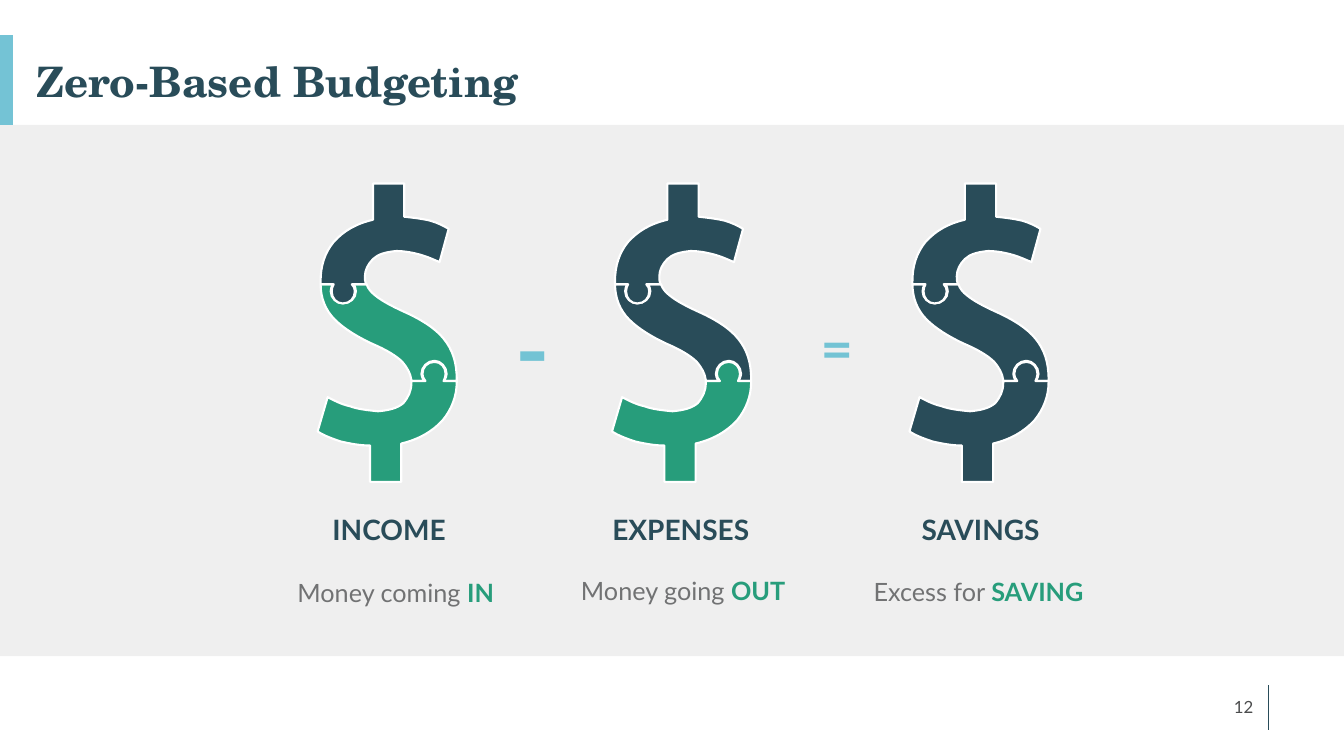
from lxml.etree import Element, SubElement
from pptx import Presentation
from pptx.dml.color import RGBColor
from pptx.enum.shapes import MSO_CONNECTOR, MSO_SHAPE
from pptx.enum.text import MSO_ANCHOR, PP_ALIGN
from pptx.oxml.ns import qn
from pptx.util import Inches, Pt

CELL = Inches(0.01)
COLUMNS, ROWS = 1333, 750
NAVY = RGBColor(0x29, 0x4C, 0x59)
GREEN = RGBColor(0x27, 0x9D, 0x7B)
SKY = RGBColor(0x74, 0xC3, 0xD5)
SIGN_BLUE = RGBColor(0x73, 0xC3, 0xD4)
GREY = RGBColor(0x71, 0x72, 0x73)
DARK_GREY = RGBColor(0x4B, 0x4C, 0x4D)
PALE = RGBColor(0xE1, 0xE1, 0xE1)
WHITE = RGBColor(0xFF, 0xFF, 0xFF)
BODY, HEADING = "Lato", "TeX Gyre Schola"

MIDDLE_PIECE = [
    (3, 100), (15, 100), (14, 102, 13, 105, 13, 107),
    (13, 114, 19, 119, 25, 119), (32, 119, 38, 114, 38, 107),
    (38, 105, 37, 102, 36, 100), (49, 100), (49, 101),
    (50, 104, 53, 108, 57, 111), (63, 116, 72, 121, 85, 127),
    (103, 135, 117, 144, 125, 154), (134, 165, 138, 178, 138, 194),
    (138, 196), (125, 196), (126, 195), (127, 193, 128, 191, 128, 189),
    (128, 182, 122, 176, 116, 176), (109, 176, 103, 182, 103, 189),
    (103, 191, 104, 193, 105, 195), (106, 196), (93, 196), (93, 195),
    (92, 188, 89, 183, 84, 177), (78, 171, 68, 165, 54, 159),
    (39, 152, 26, 144, 17, 135), (8, 126, 3, 114, 3, 100),
]
TOP_PIECE = [
    (55, 0), (86, 0), (86, 33), (95, 34, 104, 35, 112, 37),
    (119, 39, 125, 42, 130, 45), (121, 78),
    (116, 76, 110, 73, 103, 71), (96, 69, 87, 67, 78, 67),
    (68, 68, 60, 70, 55, 75), (50, 80, 47, 86, 47, 92),
    (47, 95, 47, 97, 48, 100), (34, 100),
    (36, 102, 37, 104, 37, 107), (37, 114, 32, 119, 25, 119),
    (19, 119, 14, 114, 14, 107), (14, 104, 15, 102, 16, 100),
    (3, 100), (3, 97), (3, 82, 7, 69, 16, 58), (26, 47, 38, 40, 55, 36),
]
BOTTOM_PIECE = [
    (116, 177), (122, 177, 127, 182, 127, 189),
    (127, 191, 126, 194, 125, 196), (138, 196), (138, 197),
    (138, 211, 133, 224, 124, 235), (114, 246, 100, 254, 83, 258),
    (83, 296), (52, 296), (52, 260), (42, 260, 32, 258, 23, 256),
    (14, 253, 6, 250, 0, 246), (10, 212), (16, 215, 23, 219, 32, 221),
    (40, 224, 50, 225, 60, 226), (71, 225, 79, 223, 85, 218),
    (90, 212, 93, 206, 93, 198), (93, 197, 93, 197, 93, 196),
    (107, 196), (105, 194, 104, 191, 104, 189),
    (104, 182, 109, 177, 116, 177),
]
PIECES = [MIDDLE_PIECE, TOP_PIECE, BOTTOM_PIECE]

TERMS = [
    dict(left=315, colors=[GREEN, NAVY, GREEN], label="INCOME", label_box=(3, 134),
         caption=("Money coming ", "IN"), caption_box=(-41, 380, 237)),
    dict(left=607, colors=[NAVY, NAVY, GREEN], label="EXPENSES", label_box=(-11, 157),
         caption=("Money going ", "OUT"), caption_box=(-54, 378, 249)),
    dict(left=902, colors=[NAVY, NAVY, NAVY], label="SAVINGS", label_box=(-2, 141),
         caption=("Excess for ", "SAVING"), caption_box=(-59, 379, 255)),
]


def add_text(page, box, spans, align, anchor=MSO_ANCHOR.MIDDLE, spacing=None, wrap=True):
    """Place one paragraph of (text, size, color, bold, font) spans in a grid box."""
    frame = page.shapes.add_textbox(*(CELL * part for part in box)).text_frame
    frame.word_wrap, frame.vertical_anchor = wrap, anchor
    para = frame.paragraphs[0]
    para.alignment, para.line_spacing = align, spacing
    for text, size, color, bold, font in spans:
        span = para.add_run()
        span.text = text
        for name, value in dict(size=Pt(size), bold=bold, name=font).items():
            setattr(span.font, name, value)
        span.font.color.rgb = color


def add_rule(page, column, top, bottom, color, width):
    """Draw a vertical line down one grid column."""
    rule = page.shapes.add_connector(
        MSO_CONNECTOR.STRAIGHT, *(CELL * part for part in (column, top, column, bottom)))
    rule.line.color.rgb, rule.line.width = color, Pt(width)
    SubElement(rule._element.spPr, qn("a:effectLst"))


def bend_lines(piece, steps, left, top):
    """Turn each line whose step has control points into a Bezier curve."""
    lines = piece._element.spPr.findall(".//" + qn("a:lnTo"))
    for line, step in zip(lines, steps[1:]):
        if len(step) == 6:
            line.tag = qn("a:cubicBezTo")
            for place, (x, y) in enumerate([step[:2], step[2:4]]):
                control = Element(qn("a:pt"), x=str(CELL * (left + x) - piece.left),
                                  y=str(CELL * (top + y) - piece.top))
                line.insert(place, control)


def draw_dollar(page, left, top, colors):
    """Build a dollar sign from its three puzzle pieces."""
    for steps, color in zip(PIECES, colors):
        points = [(CELL * (left + step[-2]), CELL * (top + step[-1])) for step in steps]
        builder = page.shapes.build_freeform(*points[0])
        builder.add_line_segments(points[1:], close=True)
        piece = builder.convert_to_shape()
        bend_lines(piece, steps, left, top)
        piece.shadow.inherit = False
        piece.fill.solid()
        piece.fill.fore_color.rgb = color
        piece.line.color.rgb, piece.line.width = WHITE, Pt(1.5)


def draw_term(page, top, left, colors, label, label_box, caption, caption_box):
    """Draw one term of the equation: dollar sign, label and caption."""
    draw_dollar(page, left, top, colors)
    shift, width = label_box
    add_text(page, (left + shift, top + 327, width, 38), [(label, 20, NAVY, True, BODY)],
             PP_ALIGN.RIGHT, spacing=Pt(20), wrap=False)
    shift, drop, width = caption_box
    plain, strong = caption
    add_text(page, (left + shift, top + drop, width, 43),
             [(plain, 18, GREY, False, BODY), (strong, 18, GREEN, True, BODY)],
             PP_ALIGN.CENTER, MSO_ANCHOR.TOP, 1.2)


def draw_frame(page, title, number):
    """Draw the grey band, the rules, the title and the page number."""
    band = page.shapes.add_shape(
        MSO_SHAPE.RECTANGLE, *(CELL * part for part in (0, 124, COLUMNS, 527)))
    band.shadow.inherit = False
    band.fill.solid()
    band.fill.fore_color.rgb = PALE
    SubElement(band._element.spPr.find(".//" + qn("a:srgbClr")), qn("a:alpha"), val="50000")
    band.line.fill.background()
    add_rule(page, 6, 35, 124, SKY, 10)
    add_rule(page, 1258, 680, 724, NAVY, 0.75)
    add_text(page, (953, 681, 300, 40), [(number, 12, DARK_GREY, False, BODY)], PP_ALIGN.RIGHT)
    add_text(page, (26, 35, 1150, 76), [(title, 30, NAVY, True, HEADING)],
             PP_ALIGN.LEFT, MSO_ANCHOR.BOTTOM, 0.9)


def main():
    """Build and save the deck."""
    deck = Presentation()
    deck.slide_width, deck.slide_height = CELL * COLUMNS, CELL * ROWS
    page = deck.slides.add_slide(deck.slide_layouts[6])
    draw_frame(page, "Zero-Based Budgeting", "12")
    for term in TERMS:
        draw_term(page, 182, **term)
    for sign, size, box in [("-", 66, (477, 284, 103, 121)), ("=", 40, (771, 306, 118, 77))]:
        add_text(page, box, [(sign, size, SIGN_BLUE, True, BODY)], PP_ALIGN.CENTER)
    deck.save("out.pptx")


if __name__ == "__main__":
    main()
